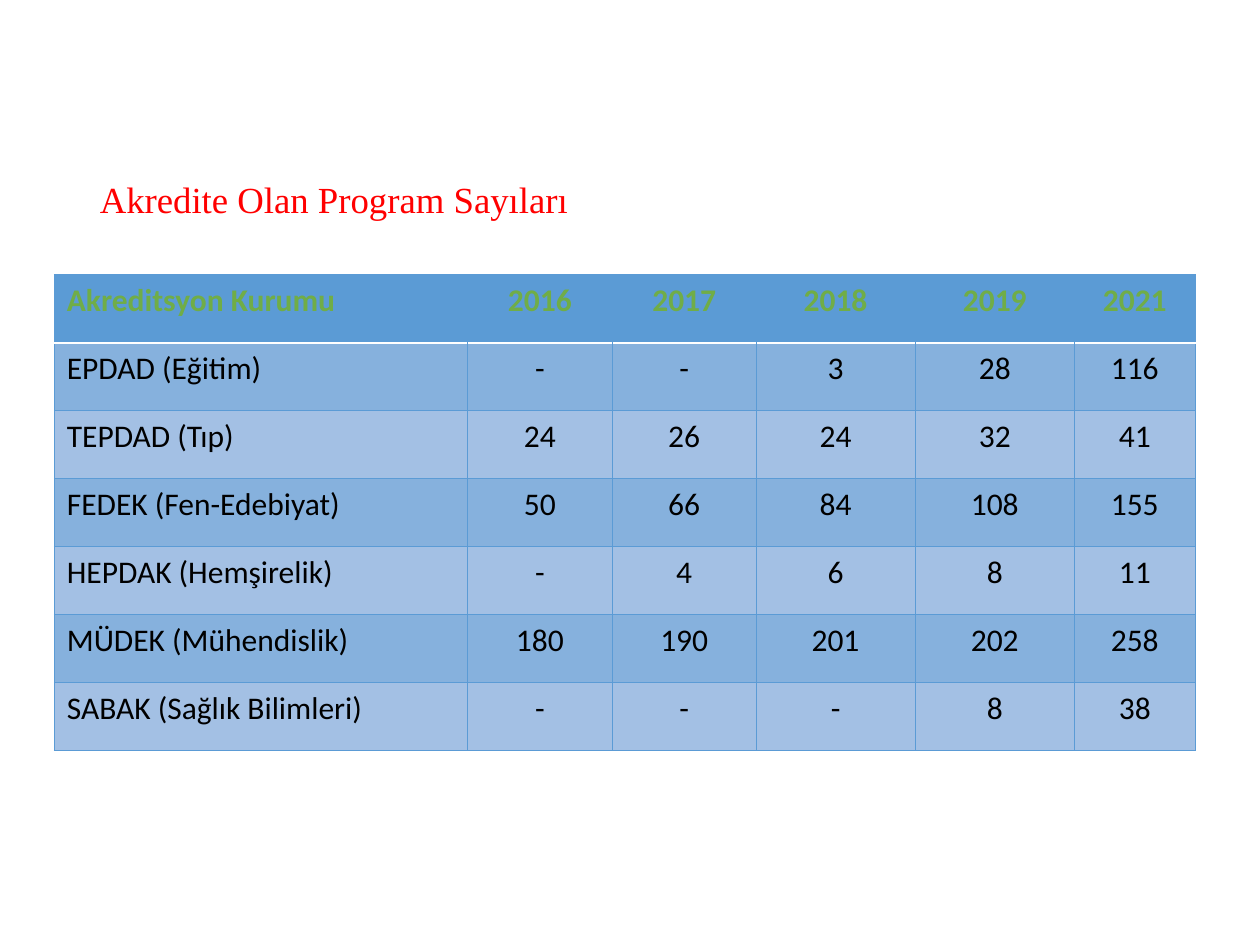
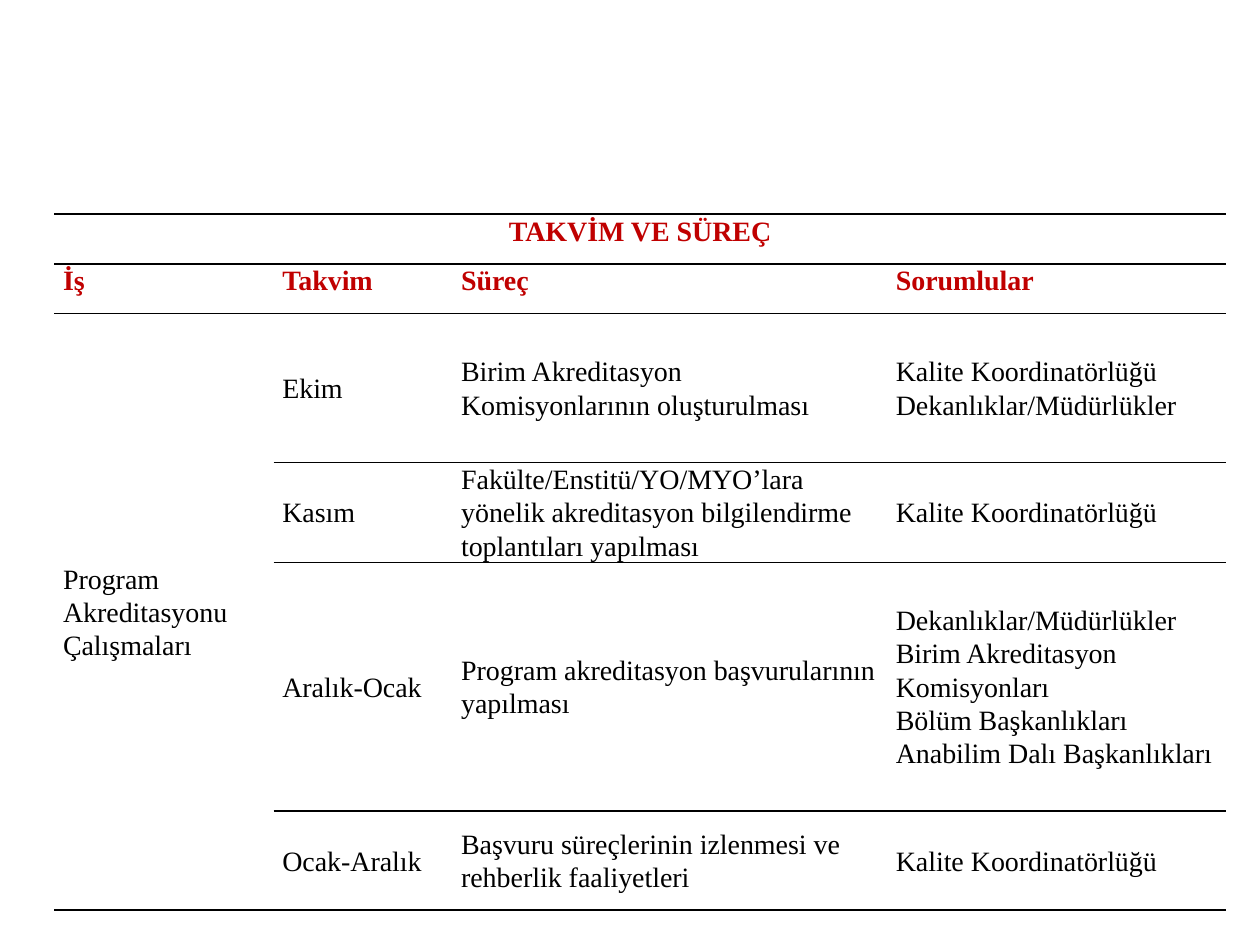
from lxml.etree import SubElement
from pptx import Presentation
from pptx.dml.color import RGBColor
from pptx.enum.text import MSO_ANCHOR as Anchor, PP_ALIGN as Align
from pptx.oxml.ns import qn
from pptx.util import Pt

COLORS = {
    "title": "FF0000", "header": "5B9BD5", "header_text": "70AD47",
    "odd_row": "86B1DD", "even_row": "A3C0E4", "white": "FFFFFF",
    "heading": "C00000", "text": "000000",
}
SERIF, SANS = "Times New Roman", "Calibri"
TITLE_ONLY, BLANK = 5, 6

PROGRAM_COUNTS = [
    ("Akreditsyon Kurumu", "2016", "2017", "2018", "2019", "2021"),
    ("EPDAD (Eğitim)", "-", "-", "3", "28", "116"),
    ("TEPDAD (Tıp)", "24", "26", "24", "32", "41"),
    ("FEDEK (Fen-Edebiyat)", "50", "66", "84", "108", "155"),
    ("HEPDAK (Hemşirelik)", "-", "4", "6", "8", "11"),
    ("MÜDEK (Mühendislik)", "180", "190", "201", "202", "258"),
    ("SABAK (Sağlık Bilimleri)", "-", "-", "-", "8", "38"),
]
CALENDAR = [
    ("TAKVİM VE SÜREÇ", "", "", ""),
    ("İş", "Takvim", "Süreç", "Sorumlular"),
    ("Program Akreditasyonu Çalışmaları", "Ekim",
     "Birim Akreditasyon Komisyonlarının oluşturulması",
     "Kalite Koordinatörlüğü\nDekanlıklar/Müdürlükler"),
    ("", "Kasım",
     "Fakülte/Enstitü/YO/MYO’lara yönelik akreditasyon bilgilendirme "
     "toplantıları yapılması", "Kalite Koordinatörlüğü"),
    ("", "Aralık-Ocak", "Program akreditasyon başvurularının yapılması",
     "Dekanlıklar/Müdürlükler\nBirim Akreditasyon Komisyonları\n"
     "Bölüm Başkanlıkları\nAnabilim Dalı Başkanlıkları"),
    ("", "Ocak-Aralık",
     "Başvuru süreçlerinin izlenmesi ve rehberlik faaliyetleri",
     "Kalite Koordinatörlüğü"),
]


def color(name):
    return RGBColor.from_string(COLORS[name])


def format_text(text_frame, font, size, color_name, bold=False,
                align=Align.LEFT, spacing=None):
    for paragraph in text_frame.paragraphs:
        paragraph.alignment = align
        paragraph.line_spacing = spacing
        for run in paragraph.runs:
            run.font.name = font
            run.font.size = Pt(size)
            run.font.bold = bold
            run.font.color.rgb = color(color_name)


def set_borders(cell, **sides):
    """Give each side (L, R, T, B) a (color, width) line; the others get none."""
    properties = cell._tc.get_or_add_tcPr()
    for side in "LRTB":
        line = SubElement(properties, qn(f"a:ln{side}"))
        if sides.get(side):
            color_name, width = sides[side]
            line.set("w", str(Pt(width)))
            fill = SubElement(line, qn("a:solidFill"))
            SubElement(fill, qn("a:srgbClr")).set("val", COLORS[color_name])
        else:
            SubElement(line, qn("a:noFill"))


def add_plain_table(slide, left, top, widths, heights):
    table = slide.shapes.add_table(
        len(heights), len(widths), Pt(left), Pt(top),
        Pt(sum(widths)), Pt(sum(heights))).table
    table.first_row = table.horz_banding = False
    for column, width in zip(table.columns, widths):
        column.width = Pt(width)
    for row, height in zip(table.rows, heights):
        row.height = Pt(height)
    return table


def add_title(slide, text, left, top, width, height):
    title = slide.shapes.title
    title.left, title.top = Pt(left), Pt(top)
    title.width, title.height = Pt(width), Pt(height)
    text_frame = title.text_frame
    text_frame.text = text
    text_frame.margin_left = Pt(21)
    text_frame.vertical_anchor = Anchor.TOP
    format_text(text_frame, SERIF, 21, "title", spacing=0.9)


def add_counts_table(slide, left, top):
    widths = [236, 83, 82, 91, 91, 69]
    table = add_plain_table(slide, left, top, widths,
                            [38.88] * len(PROGRAM_COUNTS))
    grid, rule = ("header", 0.5), ("white", 1)
    last_column = len(widths) - 1
    for i, values in enumerate(PROGRAM_COUNTS):
        header = i == 0
        for j, value in enumerate(values):
            cell = table.cell(i, j)
            cell.text = value
            format_text(cell.text_frame, SANS, 18,
                        "header_text" if header else "text", header,
                        Align.CENTER if j else Align.LEFT)
            set_borders(cell,
                        L=None if header and j else grid,
                        R=None if header and j < last_column else grid,
                        T=rule if i == 1 else grid,
                        B=rule if header else grid)
            cell.fill.solid()
            cell.fill.fore_color.rgb = color(
                "header" if header else "odd_row" if i % 2 else "even_row")


def add_calendar_table(slide, left, top):
    line_height = 28.4
    heights = [line_height * lines for lines in (1, 1, 3, 2, 5, 2)]
    table = add_plain_table(slide, left, top, [125.3, 102.2, 248.4, 193.7], heights)
    last_row = len(heights) - 1
    table.cell(0, 0).merge(table.cell(0, 3))
    table.cell(2, 0).merge(table.cell(last_row, 0))
    rule = ("text", 1)
    for i, values in enumerate(CALENDAR):
        heading = i < 2
        for j, value in enumerate(values):
            cell = table.cell(i, j)
            inside_task = j == 0 and i > 2
            set_borders(cell, T=None if inside_task else rule,
                        B=None if inside_task and i < last_row else rule)
            cell.fill.background()
            cell.margin_left = cell.margin_right = Pt(5)
            cell.margin_top = cell.margin_bottom = Pt(0)
            cell.vertical_anchor = Anchor.TOP if heading else Anchor.MIDDLE
            if not cell.is_spanned:
                cell.text = value
                format_text(cell.text_frame, SERIF, 16,
                            "heading" if heading else "text", heading,
                            Align.CENTER if i == 0 else Align.LEFT, 1.07)


def add_counts_slide(presentation):
    slide = presentation.slides.add_slide(presentation.slide_layouts[TITLE_ONLY])
    add_title(slide, "Akredite Olan Program Sayıları", 36, 100, 648, 42)
    add_counts_table(slide, 31, 157)


def add_calendar_slide(presentation):
    slide = presentation.slides.add_slide(presentation.slide_layouts[BLANK])
    add_calendar_table(slide, 31, 122.4)


def main():
    presentation = Presentation()
    presentation.slide_width, presentation.slide_height = Pt(720), Pt(540)
    add_counts_slide(presentation)
    add_calendar_slide(presentation)
    presentation.save("out.pptx")


if __name__ == "__main__":
    main()
